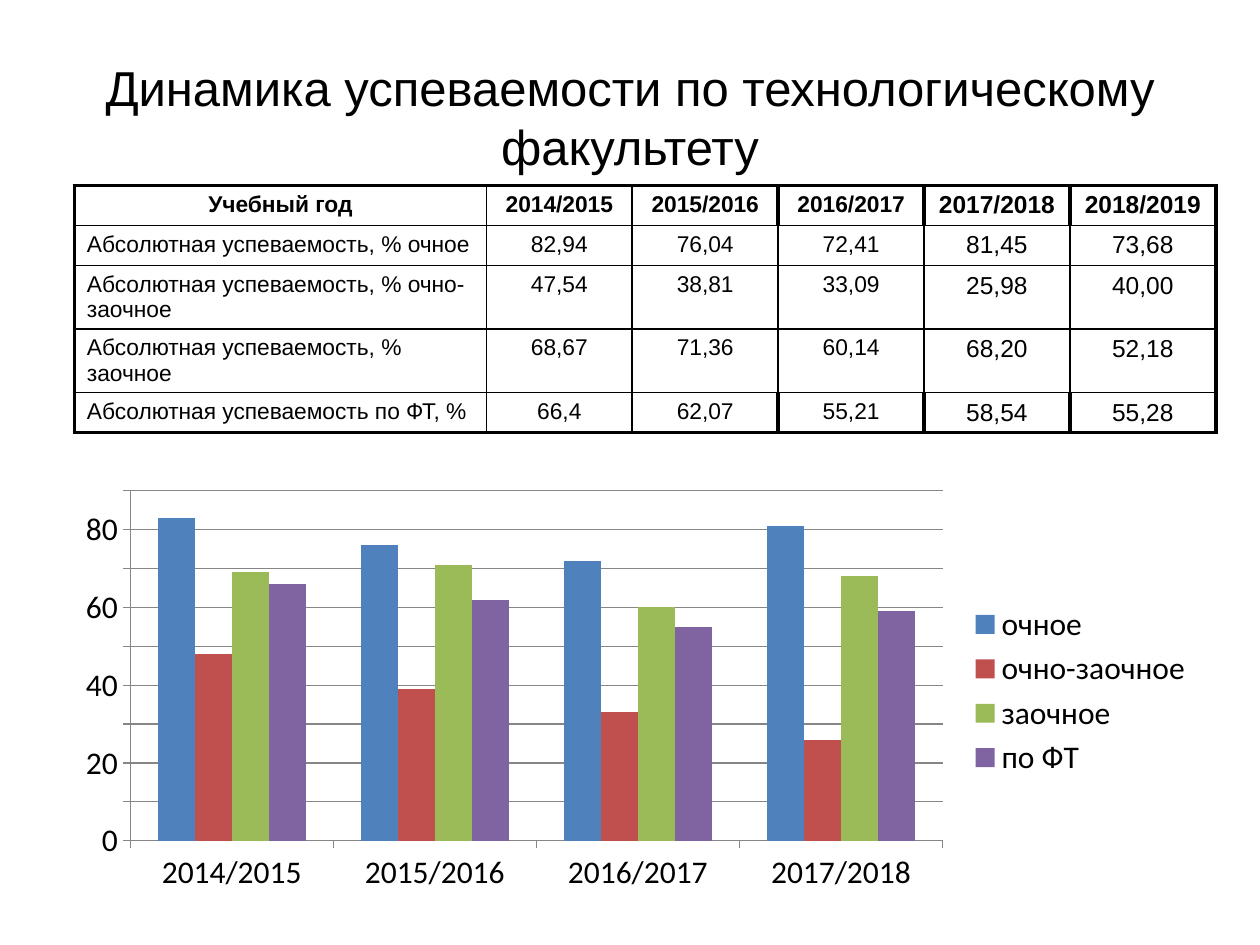
from pptx import Presentation
from pptx.chart.data import CategoryChartData
from pptx.dml.color import RGBColor
from pptx.enum.chart import XL_CHART_TYPE, XL_LEGEND_POSITION, XL_TICK_MARK
from pptx.enum.text import MSO_ANCHOR, PP_ALIGN
from pptx.oxml import parse_xml
from pptx.oxml.ns import nsdecls
from pptx.util import Inches, Pt

COLUMN_CLUSTERED = XL_CHART_TYPE.COLUMN_CLUSTERED
LEGEND_RIGHT = XL_LEGEND_POSITION.RIGHT
TICK_OUTSIDE = XL_TICK_MARK.OUTSIDE
MIDDLE = MSO_ANCHOR.MIDDLE
LEFT, CENTER = PP_ALIGN.LEFT, PP_ALIGN.CENTER

BLACK = RGBColor(0x00, 0x00, 0x00)
GRAY = RGBColor(0x86, 0x86, 0x86)
BLUE = RGBColor(0x4F, 0x81, 0xBD)
RED = RGBColor(0xC0, 0x50, 0x4D)
GREEN = RGBColor(0x9B, 0xBB, 0x59)
PURPLE = RGBColor(0x80, 0x64, 0xA2)

THIN, THICK = Pt(1), Pt(2.25)
TABLE_WIDTH, LABEL_WIDTH = Inches(9.06), Inches(3.27)

YEARS = ["2014/2015", "2015/2016", "2016/2017", "2017/2018", "2018/2019"]
RATES = [
    ("очное", "Абсолютная успеваемость, % очное", BLUE,
     ["82,94", "76,04", "72,41", "81,45", "73,68"]),
    ("очно-заочное", "Абсолютная успеваемость, % очно-заочное", RED,
     ["47,54", "38,81", "33,09", "25,98", "40,00"]),
    ("заочное", "Абсолютная успеваемость, % заочное", GREEN,
     ["68,67", "71,36", "60,14", "68,20", "52,18"]),
    ("по ФТ", "Абсолютная успеваемость по ФТ, %", PURPLE,
     ["66,4", "62,07", "55,21", "58,54", "55,28"]),
]
CHART_YEARS = 4


def style_font(font, name, size, bold=False):
    font.name = name
    font.size = Pt(size)
    font.bold = bold
    font.color.rgb = BLACK


def add_border(cell, side, width):
    cell._tc.get_or_add_tcPr().append(parse_xml(
        f'<a:ln{side} {nsdecls("a")} w="{width}"><a:solidFill>'
        f'<a:srgbClr val="{BLACK}"/></a:solidFill></a:ln{side}>'))


deck = Presentation()
deck.slide_width = Inches(10)
deck.slide_height = Inches(7.5)
page = deck.slides.add_slide(deck.slide_layouts[5])

title = page.shapes.title
title.left, title.top = Inches(0.5), Inches(0.3)
title.width, title.height = Inches(9), Inches(1.25)
title.text_frame.text = "Динамика успеваемости по технологическому факультету"
title.text_frame.vertical_anchor = MIDDLE
title_para = title.text_frame.paragraphs[0]
title_para.alignment = CENTER
style_font(title_para.font, "Arial", 28)

table_rows = [["Учебный год"] + YEARS]
table_rows += [[label] + values for _, label, _, values in RATES]
last_row, last_col = len(table_rows) - 1, len(YEARS)

table = page.shapes.add_table(
    last_row + 1, last_col + 1,
    Inches(0.59), Inches(1.47), TABLE_WIDTH, Inches(1.4)).table
table.first_row = False
table.horz_banding = False
year_width = (TABLE_WIDTH - LABEL_WIDTH) // len(YEARS)
for col, column in enumerate(table.columns):
    column.width = year_width if col else LABEL_WIDTH

for row, texts in enumerate(table_rows):
    table.rows[row].height = Inches(0.28)
    edge_row = row in (0, last_row)
    for col, text in enumerate(texts):
        cell = table.cell(row, col)
        cell.text = text
        para = cell.text_frame.paragraphs[0]
        para.alignment = CENTER if row == 0 or col else LEFT
        style_font(para.font, "Arial", 14 if col > 3 else 13, row == 0)
        thick_left = col == 0 or (edge_row and col > 2)
        thick_right = col == last_col or (edge_row and col > 1)
        add_border(cell, "L", THICK if thick_left else THIN)
        add_border(cell, "R", THICK if thick_right else THIN)
        add_border(cell, "T", THICK if row == 0 else THIN)
        add_border(cell, "B", THICK if row == last_row else THIN)
        cell.fill.background()

chart_data = CategoryChartData()
chart_data.categories = YEARS[:CHART_YEARS]
for name, _, _, values in RATES:
    chart_data.add_series(
        name,
        [round(float(value.replace(",", "."))) for value in values[:CHART_YEARS]])

chart = page.shapes.add_chart(
    COLUMN_CLUSTERED, Inches(0.5), Inches(3.83), Inches(9.07), Inches(3.31),
    chart_data).chart
style_font(chart.font, "Calibri", 18)
chart.has_title = False
chart.has_legend = True
chart.legend.position = LEGEND_RIGHT
chart.legend.include_in_layout = False

plot = chart.plots[0]
plot.vary_by_categories = False
plot.gap_width = 150
for series, (_, _, color, _) in zip(plot.series, RATES):
    series.format.fill.solid()
    series.format.fill.fore_color.rgb = color

for axis in (chart.category_axis, chart.value_axis):
    axis.major_tick_mark = TICK_OUTSIDE
    axis.format.line.color.rgb = GRAY
chart.value_axis.minimum_scale = 0
chart.value_axis.maximum_scale = 90
chart.value_axis.major_unit = 10
chart.value_axis.has_major_gridlines = True
chart.value_axis.major_gridlines.format.line.color.rgb = GRAY

deck.save("out.pptx")
